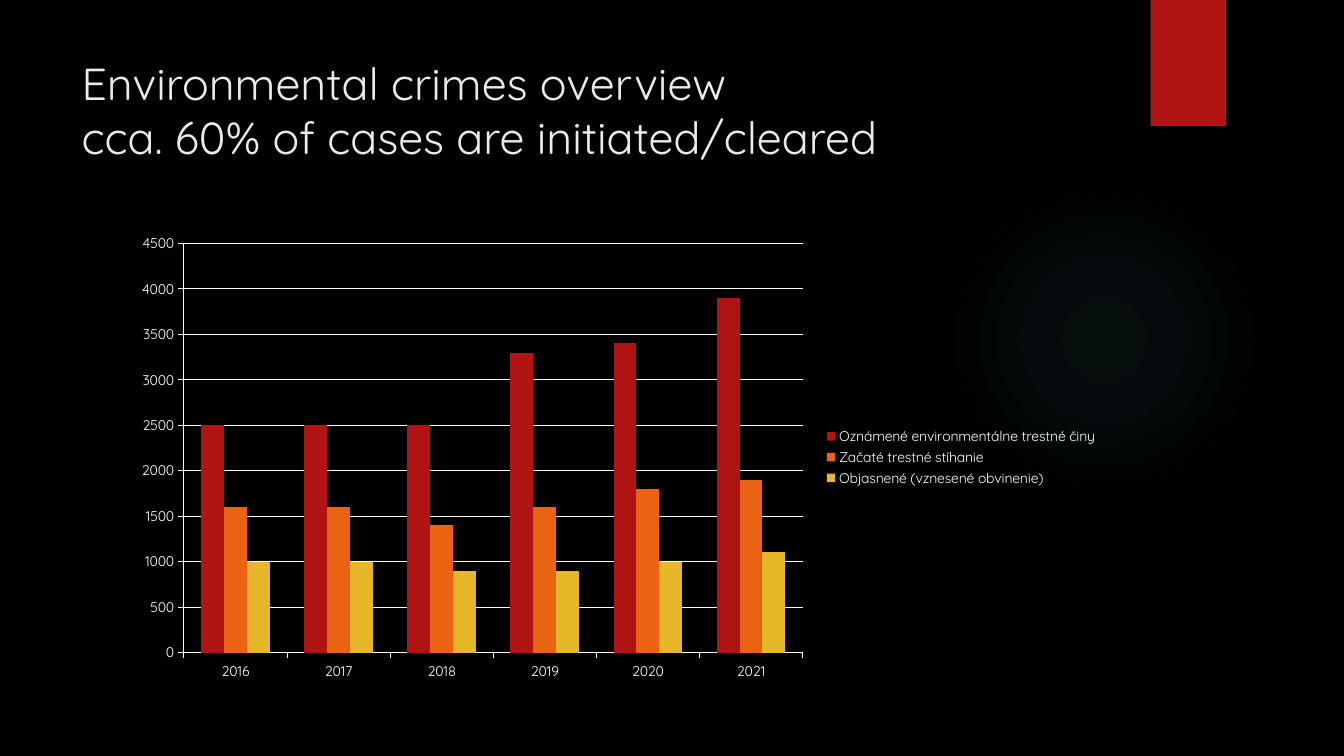
from lxml import etree
from pptx import Presentation
from pptx.chart.data import CategoryChartData
from pptx.dml.color import RGBColor
from pptx.enum.chart import XL_CHART_TYPE, XL_LEGEND_POSITION, XL_TICK_MARK
from pptx.enum.shapes import MSO_SHAPE
from pptx.enum.text import MSO_ANCHOR, MSO_AUTO_SIZE, PP_ALIGN
from pptx.oxml import parse_xml
from pptx.oxml.ns import nsdecls, qn
from pptx.util import Cm, Pt

COLUMNS = XL_CHART_TYPE.COLUMN_CLUSTERED
RIGHT = XL_LEGEND_POSITION.RIGHT
OUTSIDE = XL_TICK_MARK.OUTSIDE
RECT, OVAL = MSO_SHAPE.RECTANGLE, MSO_SHAPE.OVAL
TOP, LEFT = MSO_ANCHOR.TOP, PP_ALIGN.LEFT
NO_FIT = MSO_AUTO_SIZE.NONE

COLORS = {
    "background": "000000",
    "title": "EBEBEB",
    "chart": "FFFFFF",
    "glow": "50B9C1",
    "red": "B01513",
    "orange": "EA6312",
    "yellow": "E6B729",
}
YEARS = ["2016", "2017", "2018", "2019", "2020", "2021"]
SERIES = [
    ("Oznámené environmentálne trestné činy", "red",
     [2500, 2500, 2500, 3300, 3400, 3900]),
    ("Začaté trestné stíhanie", "orange",
     [1600, 1600, 1400, 1600, 1800, 1900]),
    ("Objasnené (vznesené obvinenie)", "yellow",
     [1000, 1000, 900, 900, 1000, 1100]),
]


def rgb(name):
    return RGBColor.from_string(COLORS[name])


class CrimeSlide:
    font = "Quicksand"

    def __init__(self, prs):
        self.s = prs.slides.add_slide(prs.slide_layouts[5])
        fill = self.s.background.fill
        fill.solid()
        fill.fore_color.rgb = rgb("background")

    def style(self, font, size, color):
        font.name = self.font
        font.size = Pt(size)
        font.color.rgb = rgb(color)

    def shape(self, kind, box, color):
        sp = self.s.shapes.add_shape(kind, *map(Cm, box))
        sp.shadow.inherit = False
        sp.line.fill.background()
        sp.fill.solid()
        sp.fill.fore_color.rgb = rgb(color)
        return sp

    def glow(self, box, color, stops):
        """Draw a circle that fades outwards; stops are (position, opacity) in percent."""
        sp = self.shape(OVAL, box, color)
        grad = parse_xml(
            f'<a:gradFill {nsdecls("a")}><a:gsLst/><a:path path="circle">'
            '<a:fillToRect l="50000" t="50000" r="50000" b="50000"/>'
            '</a:path></a:gradFill>')
        for pos, opacity in stops:
            gs = etree.SubElement(grad[0], qn("a:gs"), pos=str(pos * 1000))
            clr = etree.SubElement(gs, qn("a:srgbClr"), val=COLORS[color])
            etree.SubElement(clr, qn("a:alpha"), val=str(opacity * 1000))
        spPr = sp._element.spPr
        spPr.replace(spPr.find(qn("a:solidFill")), grad)

    def title(self, box, lines):
        sp = self.s.shapes.title
        sp.left, sp.top, sp.width, sp.height = map(Cm, box)
        tf = sp.text_frame
        tf.word_wrap = True
        tf.auto_size = NO_FIT
        tf.vertical_anchor = TOP
        p = tf.paragraphs[0]
        p.alignment = LEFT
        for i, line in enumerate(lines):
            if i:
                p.add_line_break()
            r = p.add_run()
            r.text = line
            self.style(r.font, 32, "title")

    def axis_lines(self, axis):
        axis.major_tick_mark = OUTSIDE
        axis.format.line.color.rgb = rgb("chart")
        axis.format.line.width = Pt(0.75)

    def column_chart(self, box):
        data = CategoryChartData()
        data.categories = YEARS
        for name, _, values in SERIES:
            data.add_series(name, values)
        chart = self.s.shapes.add_chart(COLUMNS, *map(Cm, box), data).chart
        self.style(chart.font, 10, "chart")
        chart.has_title = False
        chart.has_legend = True
        chart.legend.position = RIGHT
        chart.legend.include_in_layout = False

        plot = chart.plots[0]
        plot.gap_width = 150
        plot.overlap = 0
        plot.vary_by_categories = False
        for ser, (_, color, _) in zip(plot.series, SERIES):
            ser.format.fill.solid()
            ser.format.fill.fore_color.rgb = rgb(color)

        self.axis_lines(chart.category_axis)
        values = chart.value_axis
        self.axis_lines(values)
        values.minimum_scale, values.maximum_scale = 0, 4500
        values.major_unit = 500
        values.has_major_gridlines = True
        grid = values.major_gridlines.format.line
        grid.color.rgb = rgb("chart")
        grid.width = Pt(0.75)


def main():
    prs = Presentation()
    prs.slide_width, prs.slide_height = Cm(33.87), Cm(19.05)
    slide = CrimeSlide(prs)
    slide.glow((23.91, 4.65, 7.82, 7.82), "glow", [(0, 7), (36, 6), (69, 0)])
    slide.shape(RECT, (29, 0, 1.9, 3.18), "red")
    slide.title((1.8, 1.27, 26.14, 3.89),
                ["Environmental crimes overview",
                 "cca. 60% of cases are initiated/cleared"])
    slide.column_chart((3.08, 5.69, 24.84, 11.66))
    prs.save("out.pptx")


if __name__ == "__main__":
    main()
